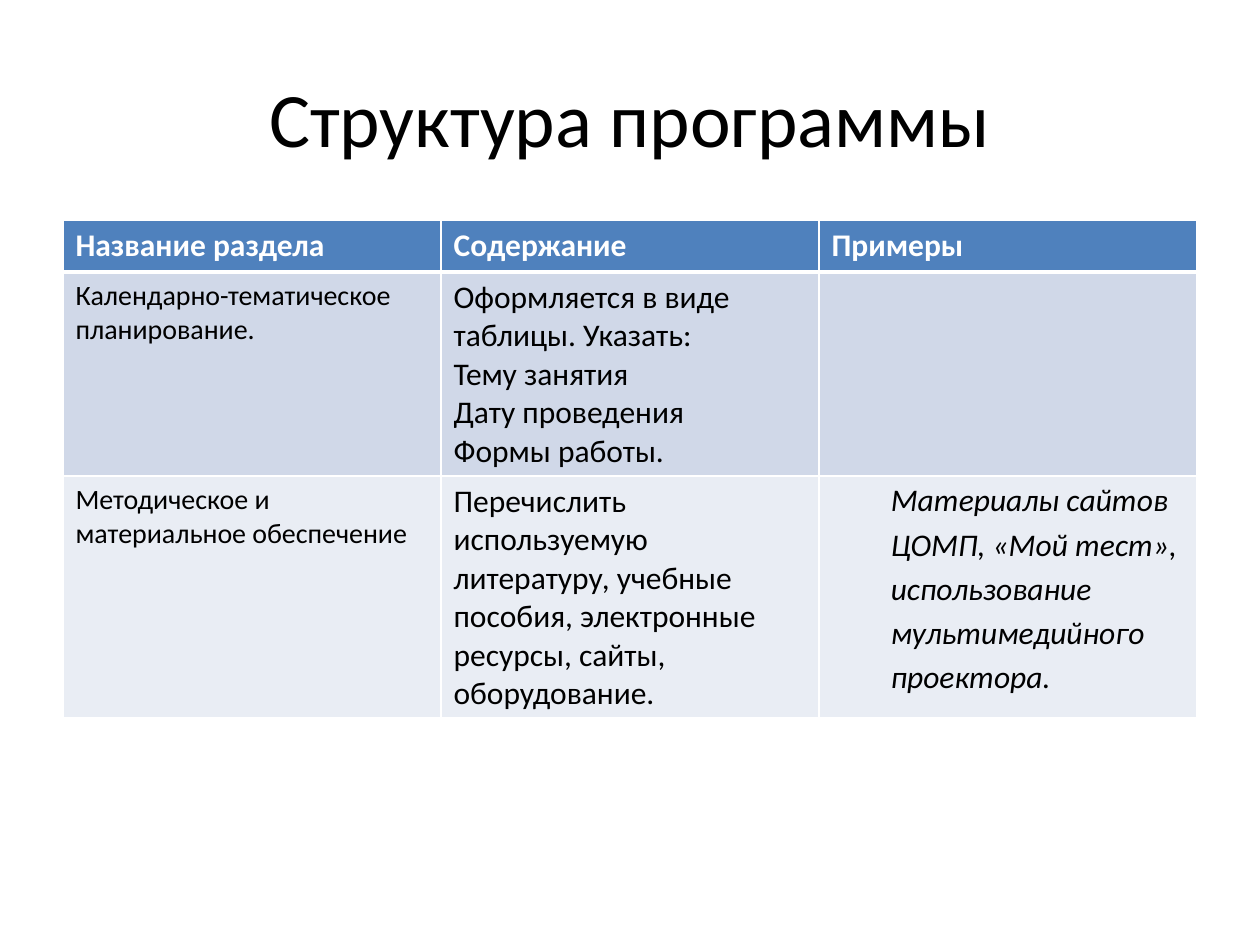
from dataclasses import dataclass

from lxml.etree import SubElement as Sub
from pptx import Presentation
from pptx.dml.color import RGBColor as RGB
from pptx.enum.text import MSO_ANCHOR as Anchor, PP_ALIGN as Align
from pptx.oxml.ns import qn
from pptx.util import Inches, Pt


@dataclass(frozen=True)
class Theme:
    font: str = "Calibri"
    title: int = 44
    body: int = 18
    small: int = 16
    ink: str = "000000"
    white: str = "FFFFFF"
    head: str = "4F81BD"
    bands: tuple = ("D0D8E8", "E9EDF4")


class Deck:
    def __init__(self, theme):
        self.theme = theme
        self.prs = Presentation()
        self.prs.slide_width = Inches(10)
        self.prs.slide_height = Inches(7.5)
        self.slide = self.prs.slides.add_slide(self.prs.slide_layouts[6])

    def label(self, frame, text, size, color, bold=False, italic=False):
        """Fill a text frame, one paragraph for each line of text."""
        frame.text = text
        for para in frame.paragraphs:
            font = para.font
            font.name, font.size = self.theme.font, Pt(size)
            font.bold, font.italic = bold, italic
            font.color.rgb = RGB.from_string(color)

    def title(self, text, left, top, width, height):
        box = self.slide.shapes.add_textbox(
            Inches(left), Inches(top), Inches(width), Inches(height))
        frame = box.text_frame
        frame.word_wrap = True
        frame.vertical_anchor = Anchor.MIDDLE
        self.label(frame, text, self.theme.title, self.theme.ink)
        frame.paragraphs[0].alignment = Align.CENTER

    def edge(self, cell, base):
        """Draw white cell borders, the lower one base points wide."""
        props = cell._tc.get_or_add_tcPr()
        for side, width in zip("LRTB", (1, 1, 1, base)):
            line = Sub(props, qn(f"a:ln{side}"), w=str(Pt(width)))
            fill = Sub(line, qn("a:solidFill"))
            Sub(fill, qn("a:srgbClr"), val=self.theme.white)

    def table(self, rows, left, top, width, heights):
        look = self.theme
        grid = self.slide.shapes.add_table(
            len(rows), len(rows[0]), Inches(left), Inches(top),
            Inches(width), Inches(sum(heights))).table
        for r, (row, height) in enumerate(zip(rows, heights)):
            grid.rows[r].height = Inches(height)
            head = r == 0
            shade = look.head if head else look.bands[(r - 1) % 2]
            for c, text in enumerate(row):
                cell = grid.cell(r, c)
                self.edge(cell, 3 if head else 1)
                cell.fill.solid()
                cell.fill.fore_color.rgb = RGB.from_string(shade)
                size = look.body if head or c else look.small
                self.label(cell.text_frame, text, size,
                           look.white if head else look.ink,
                           bold=head, italic=c == 2 and not head)
        return grid

    def inset(self, cell):
        """Indent a cell's text and open up its lines."""
        cell.margin_left = cell.margin_right = Inches(0.07)
        cell.margin_top = cell.margin_bottom = 0
        for para in cell.text_frame.paragraphs:
            para.line_spacing = 1.15
            props = para._p.get_or_add_pPr()
            props.set("marL", str(Inches(0.5)))
            props.set("indent", "0")


ROWS = [
    ("Название раздела", "Содержание", "Примеры"),
    ("Календарно-тематическое планирование.",
     "Оформляется в виде таблицы. Указать:\nТему занятия\n"
     "Дату проведения\nФормы работы.",
     ""),
    ("Методическое и материальное обеспечение",
     "Перечислить используемую литературу, учебные пособия, "
     "электронные ресурсы, сайты, оборудование.",
     "Материалы сайтов ЦОМП, «Мой тест», использование "
     "мультимедийного проектора."),
]


def main():
    deck = Deck(Theme())
    deck.title("Структура программы", 0.5, 0.3, 9, 1.25)
    grid = deck.table(ROWS, 0.5, 1.75, 9, (0.41, 1.62, 1.92))
    deck.inset(grid.cell(2, 2))
    deck.prs.save("out.pptx")


if __name__ == "__main__":
    main()
